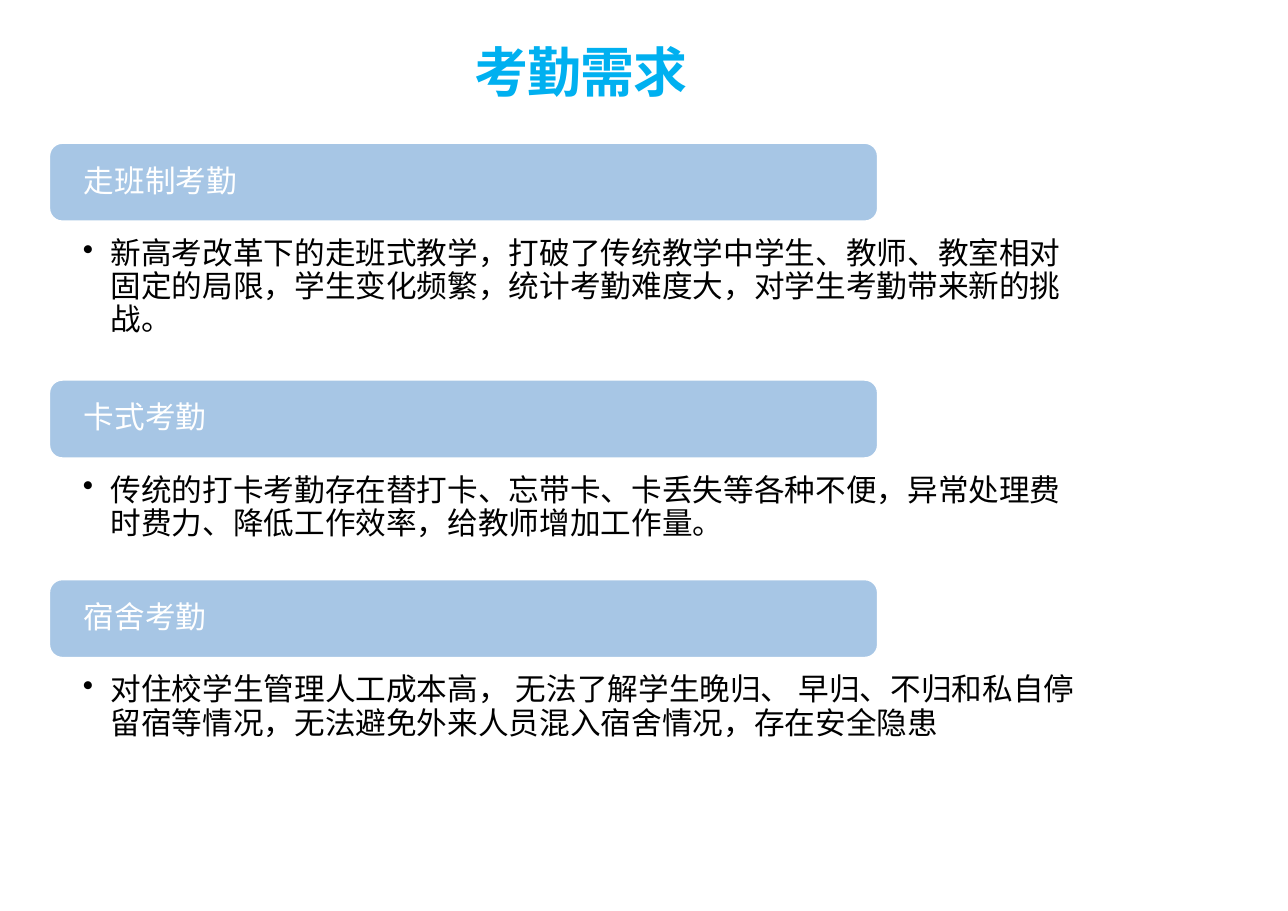
from pptx import Presentation
from pptx.dml.color import RGBColor
from pptx.enum.shapes import MSO_SHAPE
from pptx.enum.text import MSO_ANCHOR, MSO_AUTO_SIZE, PP_ALIGN
from pptx.oxml.ns import qn
from pptx.util import Cm, Pt
from lxml.etree import SubElement

SECTIONS = [
    ("走班制考勤", 4.24,
     "新高考改革下的走班式教学，打破了传统教学中学生、教师、教室相对固定的局限，"
     "学生变化频繁，统计考勤难度大，对学生考勤带来新的挑战。"),
    ("卡式考勤", 3.38,
     "传统的打卡考勤存在替打卡、忘带卡、卡丢失等各种不便，"
     "异常处理费时费力、降低工作效率，给教师增加工作量。"),
    ("宿舍考勤", 3.38,
     "对住校学生管理人工成本高， 无法了解学生晚归、 早归、不归和私自停留宿等情况，"
     "无法避免外来人员混入宿舍情况，存在安全隐患"),
]
FIRST_TOP = 4.22
SECTION_GAP = 1.22
HEADING_RISE = 0.92


def color(code):
    return RGBColor.from_string(code)


class AttendancePage:
    """Holds the style and the current slide, and adds its elements."""

    font_name = "Noto Sans CJK SC"
    text_size = 20
    white, black, bar, accent = "FFFFFF", "000000", "A7C6E5", "00B0F0"

    def __init__(self, deck):
        self.page = deck.slides.add_slide(deck.slide_layouts[5])

    def set_text(self, box, text, size, ink, insets, anchor, bulleted=False):
        frame = box.text_frame
        frame.word_wrap = True
        frame.auto_size = MSO_AUTO_SIZE.NONE
        frame.vertical_anchor = anchor
        (frame.margin_left, frame.margin_top,
         frame.margin_right, frame.margin_bottom) = map(Cm, insets)
        frame.text = text
        para = frame.paragraphs[0]
        para.alignment = PP_ALIGN.LEFT
        properties = para._p.get_or_add_pPr()
        if bulleted:
            properties.set("marL", str(Cm(0.64)))
            properties.set("indent", str(Cm(-0.64)))
            SubElement(properties, qn("a:buChar"), char="•")
        para.font.size = Pt(size)
        para.font.color.rgb = color(ink)
        para.font.name = self.font_name
        defaults = properties.find(qn("a:defRPr"))
        SubElement(defaults, qn("a:ea"), typeface=self.font_name)
        return para

    def title(self, text):
        box = self.page.shapes.title
        box.left, box.top, box.width, box.height = Cm(10.67), Cm(0.94), Cm(20.57), Cm(1.4)
        para = self.set_text(box, text, 35.3, self.accent,
                             (0.28, 0.15, 0.28, 0.15), MSO_ANCHOR.MIDDLE)
        para.font.bold = True
        para._p.pPr.find(qn("a:defRPr")).set("spc", "-80")

    def panel(self, kind, left, top, width, height, fill):
        box = self.page.shapes.add_shape(kind, Cm(left), Cm(top), Cm(width), Cm(height))
        box.shadow.inherit = False
        box.fill.solid()
        box.fill.fore_color.rgb = color(fill)
        box.line.color.rgb = color(self.white)
        box.line.width = Pt(1)
        return box

    def body(self, text, top, height):
        box = self.panel(MSO_SHAPE.RECTANGLE, -0.2, top, 27.28, height, self.white)
        para = self.set_text(box, text, self.text_size, self.black,
                             (2.11, 1.27, 2.11, 0.41), MSO_ANCHOR.TOP, bulleted=True)
        para.line_spacing = 0.9

    def heading(self, text, top):
        box = self.panel(MSO_SHAPE.ROUNDED_RECTANGLE, 1.14, top, 19.1, 1.8, self.bar)
        para = self.set_text(box, text, self.text_size, self.white,
                             (0.71, 0, 0.71, 0), MSO_ANCHOR.MIDDLE)
        para.line_spacing = 0.9


def main():
    deck = Presentation()
    deck.slide_width, deck.slide_height = Cm(29.7), Cm(21)
    page = AttendancePage(deck)
    page.title("考勤需求")
    top = FIRST_TOP
    for name, height, text in SECTIONS:
        page.body(text, top, height)
        page.heading(name, top - HEADING_RISE)
        top += height + SECTION_GAP
    deck.save("out.pptx")


if __name__ == "__main__":
    main()
